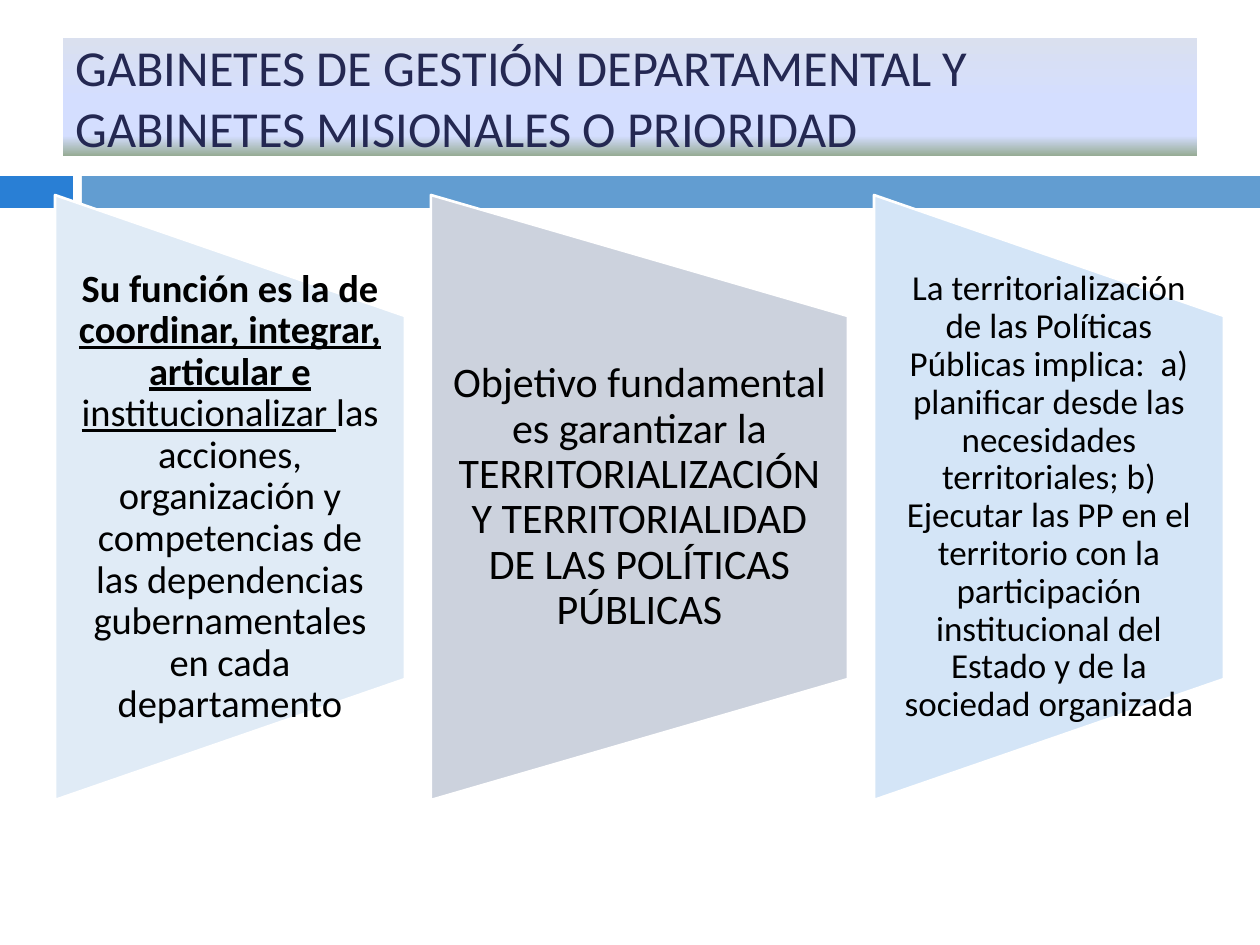
from lxml import etree
from pptx import Presentation
from pptx.dml.color import RGBColor
from pptx.enum.shapes import MSO_SHAPE
from pptx.enum.text import MSO_ANCHOR, MSO_AUTO_SIZE, PP_ALIGN
from pptx.oxml.ns import qn
from pptx.util import Emu, Pt

RECTANGLE = MSO_SHAPE.RECTANGLE
TRAPEZOID = MSO_SHAPE.FLOWCHART_MANUAL_OPERATION
MIDDLE = MSO_ANCHOR.MIDDLE
LEFT, CENTER = PP_ALIGN.LEFT, PP_ALIGN.CENTER

FONT = "Calibri"
COLORS = {
    "title": "242852", "text": "000000", "edge": "FFFFFF",
    "accent": "297FD5", "band": "629DD1",
    "ice": "E0EBF6", "slate": "CCD2DD", "sky": "D4E5F7",
}
TITLE = "GABINETES DE GESTIÓN DEPARTAMENTAL Y GABINETES MISIONALES O PRIORIDAD"
TITLE_GRADIENT = [(0, "DAE0EF"), (53, "D4DEFF"), (83, "D4DEFF"), (100, "96AB94")]
BARS = [(0, 73, "accent"), (82, 1178, "band")]  # left, width, color

# Each run is (text, bold, underline)
PANELS = [
    {"width": 350, "color": "ice", "size": 22, "inset": 19, "runs": [
        ("Su función es la de ", True, False),
        ("coordinar, integrar, articular e ", True, True),
        ("institucionalizar ", False, True),
        ("las acciones, organización y competencias de las dependencias "
         "gubernamentales en cada departamento", False, False)]},
    {"width": 417, "color": "slate", "size": 24, "inset": 21, "runs": [
        ("Objetivo fundamental es garantizar la TERRITORIALIZACIÓN Y "
         "TERRITORIALIDAD DE LAS POLÍTICAS PÚBLICAS", False, False)]},
    {"width": 350, "color": "sky", "size": 20, "inset": 18, "runs": [
        ("La territorialización de las Políticas Públicas implica:  a) planificar "
         "desde las necesidades territoriales; b) Ejecutar las PP en el territorio "
         "con la participación institucional del Estado y de la sociedad organizada",
         False, False)]},
]
PANEL_LEFT, PANEL_TOP, PANEL_HEIGHT, PANEL_GAP = 55, 195, 605, 26
TEXT_HEIGHT = 363


def px(value):
    return Emu(round(value * 914400 / 126))


def rgb(name):
    return RGBColor.from_string(COLORS[name])


def style_run(run, size, color, bold=False, underline=False):
    font = run.font
    font.name, font.size, font.color.rgb = FONT, Pt(size), rgb(color)
    font.bold, font.underline = bold, underline


def add_filled(slide, kind, left, top, width, height, color):
    shape = slide.shapes.add_shape(kind, px(left), px(top), px(width), px(height))
    shape.shadow.inherit = False
    shape.fill.solid()
    shape.fill.fore_color.rgb = rgb(color)
    shape.line.fill.background()
    return shape


def set_vertical_gradient(shape, stops):
    shape.fill.gradient()
    shape.fill.gradient_angle = 270
    stop_list = next(shape.element.iter(qn("a:gsLst")))
    for stop in list(stop_list):
        stop_list.remove(stop)
    for percent, color in stops:
        stop = etree.SubElement(stop_list, qn("a:gs"), pos=str(percent * 1000))
        etree.SubElement(stop, qn("a:srgbClr"), val=color)


def format_title(title):
    title.left, title.top, title.width, title.height = px(63), px(38), px(1134), px(118)
    set_vertical_gradient(title, TITLE_GRADIENT)
    frame = title.text_frame
    frame.text = TITLE
    frame.auto_size = MSO_AUTO_SIZE.NONE
    frame.vertical_anchor = MIDDLE
    paragraph = frame.paragraphs[0]
    paragraph.alignment = LEFT
    style_run(paragraph.runs[0], 28.8, "title")


def add_panel(slide, left, panel):
    """Trapezoid turned on its side, with upright text over its centre."""
    width = panel["width"]
    center_x, center_y = left + width / 2, PANEL_TOP + PANEL_HEIGHT / 2
    trapezoid = add_filled(slide, TRAPEZOID, center_x - PANEL_HEIGHT / 2,
                           center_y - width / 2, PANEL_HEIGHT, width, panel["color"])
    trapezoid.rotation = 270
    trapezoid.line.color.rgb = rgb("edge")
    trapezoid.line.width = Pt(1.5)

    box = slide.shapes.add_textbox(px(left), px(center_y - TEXT_HEIGHT / 2),
                                   px(width), px(TEXT_HEIGHT))
    frame = box.text_frame
    frame.word_wrap = True
    frame.vertical_anchor = MIDDLE
    frame.margin_left = frame.margin_right = px(panel["inset"])
    frame.margin_top = frame.margin_bottom = 0
    paragraph = frame.paragraphs[0]
    paragraph.alignment = CENTER
    paragraph.line_spacing = 0.9
    for text, bold, underline in panel["runs"]:
        run = paragraph.add_run()
        run.text = text
        style_run(run, panel["size"], "text", bold, underline)


def main():
    presentation = Presentation()
    presentation.slide_width, presentation.slide_height = px(1260), px(945)
    slide = presentation.slides.add_slide(presentation.slide_layouts[5])
    format_title(slide.shapes.title)
    for left, width, color in BARS:
        add_filled(slide, RECTANGLE, left, 176, width, 32, color)
    left = PANEL_LEFT
    for panel in PANELS:
        add_panel(slide, left, panel)
        left += panel["width"] + PANEL_GAP
    presentation.save("out.pptx")


if __name__ == "__main__":
    main()
